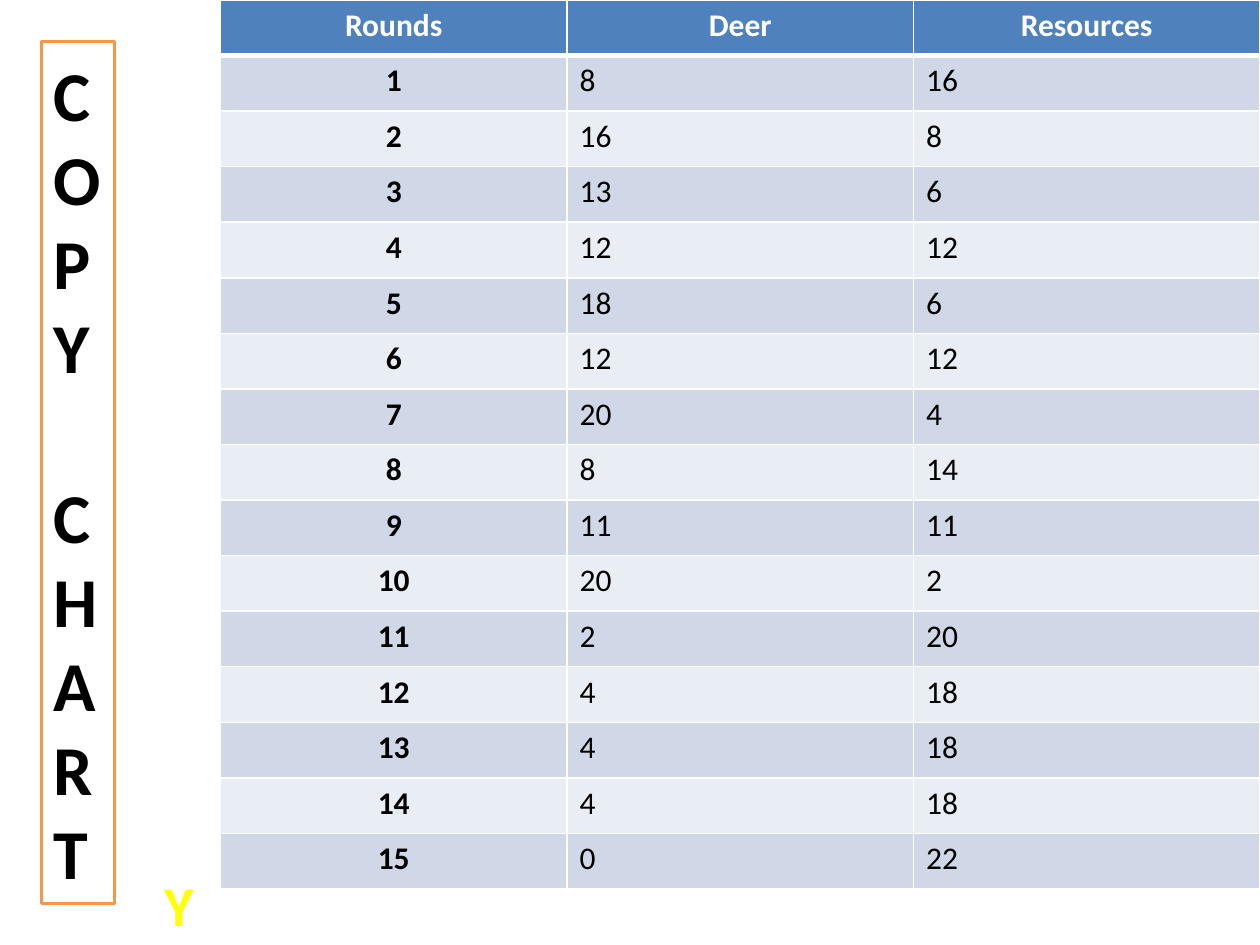
"""Build a slide with a table of deer and resources per round beside a vertical heading."""
from dataclasses import dataclass

from lxml import etree
from pptx import Presentation
from pptx.dml.color import RGBColor
from pptx.enum.shapes import MSO_SHAPE
from pptx.enum.text import MSO_ANCHOR, MSO_AUTO_SIZE, PP_ALIGN
from pptx.oxml.ns import qn
from pptx.util import Inches, Pt

CENTER, LEFT = PP_ALIGN.CENTER, PP_ALIGN.LEFT
MIDDLE = MSO_ANCHOR.MIDDLE
GROW = MSO_AUTO_SIZE.SHAPE_TO_FIT_TEXT
RECTANGLE = MSO_SHAPE.RECTANGLE


@dataclass(frozen=True)
class Theme:
    font: str = "Calibri"
    white: str = "FFFFFF"
    black: str = "000000"
    header: str = "4F81BD"
    bands: tuple = ("E9EDF4", "D0D8E8")
    frame: str = "F79646"
    yellow: str = "FFFF00"
    table_size: float = 18
    heading_size: float = 40
    letter_size: float = 32


def style(paragraph, size, color, bold, align):
    paragraph.alignment = align
    for run in paragraph.runs:
        run.font.name = theme.font
        run.font.size = Pt(size)
        run.font.bold = bold
        run.font.color.rgb = RGBColor.from_string(color)


def add_line(parent, tag, color, points):
    line = etree.SubElement(parent, qn(tag), w=str(Pt(points)))
    fill = etree.SubElement(line, qn("a:solidFill"))
    etree.SubElement(fill, qn("a:srgbClr"), val=color)
    return line


theme = Theme()
headers = ("Rounds", "Deer", "Resources")
deer = (8, 16, 13, 12, 18, 12, 20, 8, 11, 20, 2, 4, 4, 4, 0)
resources = (16, 8, 6, 12, 6, 12, 4, 14, 11, 2, 20, 18, 18, 18, 22)
records = [headers, *zip(range(1, len(deer) + 1), deer, resources)]

prs = Presentation()
prs.slide_width, prs.slide_height = Inches(10), Inches(7.5)
slide = prs.slides.add_slide(prs.slide_layouts[6])

column_width, row_height = Inches(2.75), Inches(7.06 / len(records))
table_width = column_width * len(headers)
rounds_table = slide.shapes.add_table(
    len(records), len(headers), prs.slide_width - table_width, 0,
    table_width, row_height * len(records)).table

for row, record in enumerate(records):
    is_header = row == 0
    for column, value in enumerate(record):
        cell = rounds_table.cell(row, column)
        cell.text_frame.text = str(value)
        emphasized = is_header or column == 0
        style(cell.text_frame.paragraphs[0], theme.table_size,
              theme.white if is_header else theme.black,
              emphasized, CENTER if emphasized else LEFT)
        properties = cell._tc.get_or_add_tcPr()
        for edge in ("a:lnL", "a:lnR", "a:lnT", "a:lnB"):
            thick = (row, edge) in ((0, "a:lnB"), (1, "a:lnT"))
            add_line(properties, edge, theme.white, 3 if thick else 1)
        cell.fill.solid()
        cell.fill.fore_color.rgb = RGBColor.from_string(
            theme.header if is_header else theme.bands[row % 2])

margin = Inches(0.33)
heading = slide.shapes.add_shape(
    RECTANGLE, margin, margin, Inches(0.58), prs.slide_height - 2 * margin)
heading.shadow.inherit = False
heading.fill.solid()
heading.fill.fore_color.rgb = RGBColor.from_string(theme.white)
heading.line.color.rgb = RGBColor.from_string(theme.frame)
heading.line.width = Pt(2)
letters = heading.text_frame
letters.word_wrap = False
letters.auto_size = GROW
letters.vertical_anchor = MIDDLE
words = ("COPY", "CHART")
letters.text = "\n".join("".join(words))
for paragraph in letters.paragraphs:
    style(paragraph, theme.heading_size, theme.black, True, LEFT)
letters.paragraphs[len(words[0])].space_before = Pt(1.22 * theme.heading_size)

letter_width, letter_height = Inches(1), Inches(0.64)
axis_letter = slide.shapes.add_textbox(
    Inches(0.92), prs.slide_height - letter_height,
    letter_width, letter_height).text_frame
axis_letter.word_wrap = True
axis_letter.auto_size = GROW
axis_letter.text = "Y"
style(axis_letter.paragraphs[0], theme.letter_size, theme.yellow, True, CENTER)
run_properties = axis_letter.paragraphs[0].runs[0].font._element
run_properties.insert(0, add_line(run_properties, "a:ln", theme.black, 1.42))

prs.save("out.pptx")
